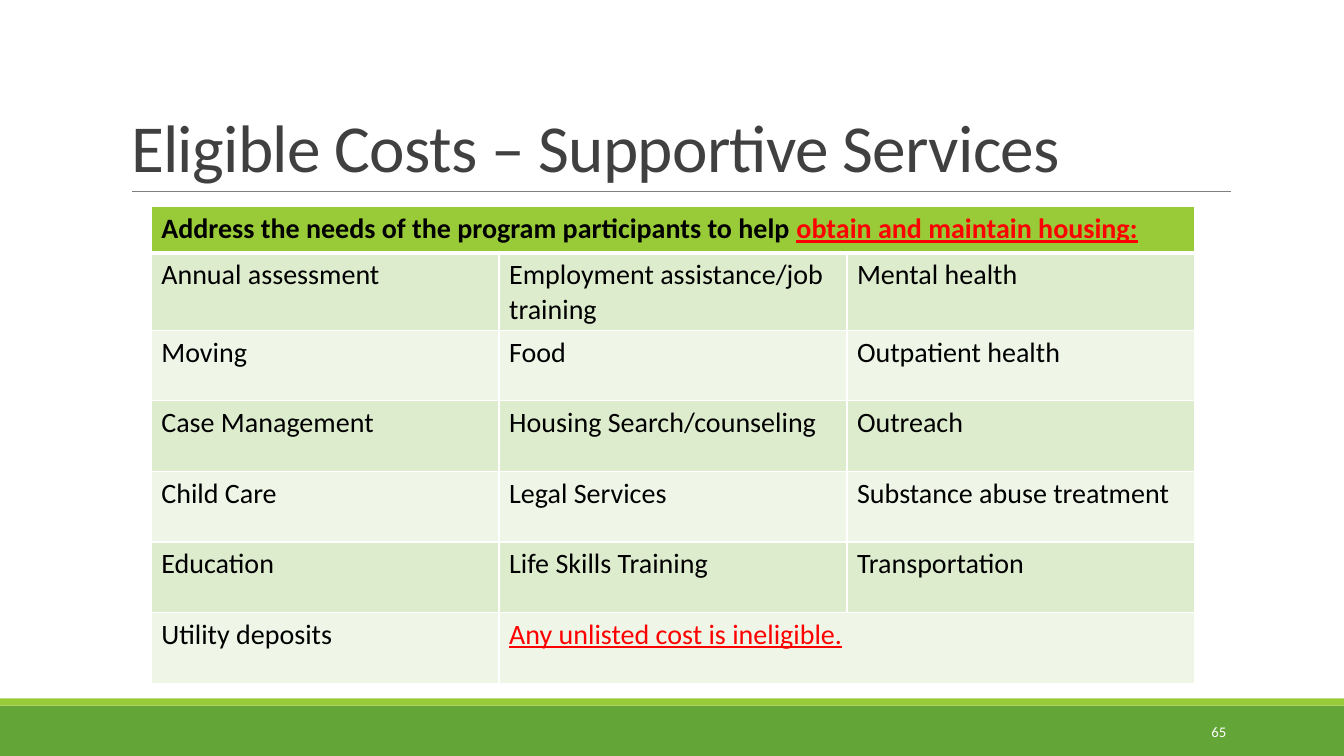
"""Build the slide on eligible supportive services costs."""
from lxml.etree import SubElement
from pptx import Presentation
from pptx.dml.color import RGBColor
from pptx.enum.shapes import MSO_CONNECTOR, MSO_SHAPE
from pptx.enum.text import MSO_ANCHOR, MSO_AUTO_SIZE, PP_ALIGN
from pptx.oxml.ns import qn
from pptx.util import Inches, Pt

TITLE = "Eligible Costs – Supportive Services"
PAGE_NUMBER = "65"
HEADING = ("Address the needs of the program participants to help ",
           "obtain and maintain housing:")
SERVICES = [
    ("Annual assessment", "Employment assistance/job training", "Mental health"),
    ("Moving", "Food", "Outpatient health"),
    ("Case Management", "Housing Search/counseling", "Outreach"),
    ("Child Care", "Legal Services", "Substance abuse treatment"),
    ("Education", "Life Skills Training", "Transportation"),
    ("Utility deposits",),
]
WARNING = "Any unlisted cost is ineligible."

FONT = "Calibri"
BLACK = RGBColor(0x00, 0x00, 0x00)
WHITE = RGBColor(0xFF, 0xFF, 0xFF)
RED = RGBColor(0xFF, 0x00, 0x00)
DARK_GRAY = RGBColor(0x40, 0x40, 0x40)
GRAY = RGBColor(0x80, 0x80, 0x80)
GREEN = RGBColor(0x63, 0xA5, 0x37)
LIME = RGBColor(0x99, 0xCB, 0x38)
ROW_FILLS = (RGBColor(0xDE, 0xEC, 0xCE), RGBColor(0xEF, 0xF6, 0xE8))

COLUMN_WIDTH = 3.45
ROW_HEIGHTS = [0.46, 0.74] + [0.7] * (len(SERVICES) - 1)


def add_text(para, text, size=20, color=BLACK, bold=False, underline=False):
    """Add a formatted span of text to a paragraph."""
    span = para.add_run()
    span.text = text
    span.font.name = FONT
    span.font.size = Pt(size)
    span.font.color.rgb = color
    span.font.bold = bold
    span.font.underline = underline
    return span


def add_band(page, top, height, color):
    """Add a full-width footer band."""
    band = page.shapes.add_shape(MSO_SHAPE.RECTANGLE, 0, Inches(top),
                                 Inches(13.33), Inches(height))
    band.shadow.inherit = False
    band.fill.solid()
    band.fill.fore_color.rgb = color
    band.line.fill.background()


def style_cell(cell, color, top=1, bottom=1):
    """Give a cell white borders of the given point widths and a fill."""
    properties = cell._tc.get_or_add_tcPr()
    for side, width in (("L", 1), ("R", 1), ("T", top), ("B", bottom)):
        border = SubElement(properties, qn(f"a:ln{side}"), w=str(Pt(width)))
        fill = SubElement(border, qn("a:solidFill"))
        SubElement(fill, qn("a:srgbClr"), val=str(WHITE))
    cell.fill.solid()
    cell.fill.fore_color.rgb = color


def add_footer(page):
    """Add the footer bands and the page number."""
    add_band(page, 7, 0.5, GREEN)
    add_band(page, 6.93, 0.07, LIME)
    box = page.shapes.add_textbox(Inches(10.83), Inches(7.06), Inches(1.43), Inches(0.4))
    box.text_frame.word_wrap = True
    box.text_frame.vertical_anchor = MSO_ANCHOR.MIDDLE
    para = box.text_frame.paragraphs[0]
    para.alignment = PP_ALIGN.RIGHT
    add_text(para, PAGE_NUMBER, size=10.5, color=WHITE)


def add_title(page):
    """Place the title and the rule under it."""
    title = page.shapes.title
    title.left, title.top = Inches(1.2), Inches(0.31)
    title.width, title.height = Inches(11), Inches(1.59)
    frame = title.text_frame
    frame.word_wrap = True
    frame.auto_size = MSO_AUTO_SIZE.NONE
    frame.vertical_anchor = MSO_ANCHOR.BOTTOM
    para = frame.paragraphs[0]
    para.alignment = PP_ALIGN.LEFT
    para.line_spacing = 0.85
    span = add_text(para, TITLE, size=48, color=DARK_GRAY)
    span.font._element.set("spc", "-50")
    rule = page.shapes.add_connector(MSO_CONNECTOR.STRAIGHT, Inches(1.31), Inches(1.9),
                                     Inches(12.21), Inches(1.9))
    rule.line.color.rgb = GRAY
    rule.line.width = Pt(0.5)
    SubElement(rule._element.spPr, qn("a:effectLst"))


def add_services_table(page):
    """Add the table of eligible services."""
    table = page.shapes.add_table(len(ROW_HEIGHTS), 3, Inches(1.5), Inches(2.05),
                                  Inches(3 * COLUMN_WIDTH),
                                  Inches(sum(ROW_HEIGHTS))).table
    for column in table.columns:
        column.width = Inches(COLUMN_WIDTH)
    for row, height in zip(table.rows, ROW_HEIGHTS):
        row.height = Inches(height)

    for cell in table.rows[0].cells:
        style_cell(cell, LIME, bottom=3)
    for number, services in enumerate(SERVICES, start=1):
        for cell in table.rows[number].cells:
            style_cell(cell, ROW_FILLS[(number - 1) % 2], top=3 if number == 1 else 1)
        for column, service in enumerate(services):
            add_text(table.cell(number, column).text_frame.paragraphs[0], service)

    heading = table.cell(0, 0)
    heading.merge(table.cell(0, 2))
    para = heading.text_frame.paragraphs[0]
    add_text(para, HEADING[0], bold=True)
    add_text(para, HEADING[1], color=RED, bold=True, underline=True)

    last = len(SERVICES)
    warning = table.cell(last, 1)
    warning.merge(table.cell(last, 2))
    add_text(warning.text_frame.paragraphs[0], WARNING, color=RED, underline=True)


def main():
    """Build and save the deck."""
    deck = Presentation()
    deck.slide_width, deck.slide_height = Inches(13.33), Inches(7.5)
    page = deck.slides.add_slide(deck.slide_layouts[5])
    add_footer(page)
    add_title(page)
    add_services_table(page)
    deck.save("out.pptx")


if __name__ == "__main__":
    main()
